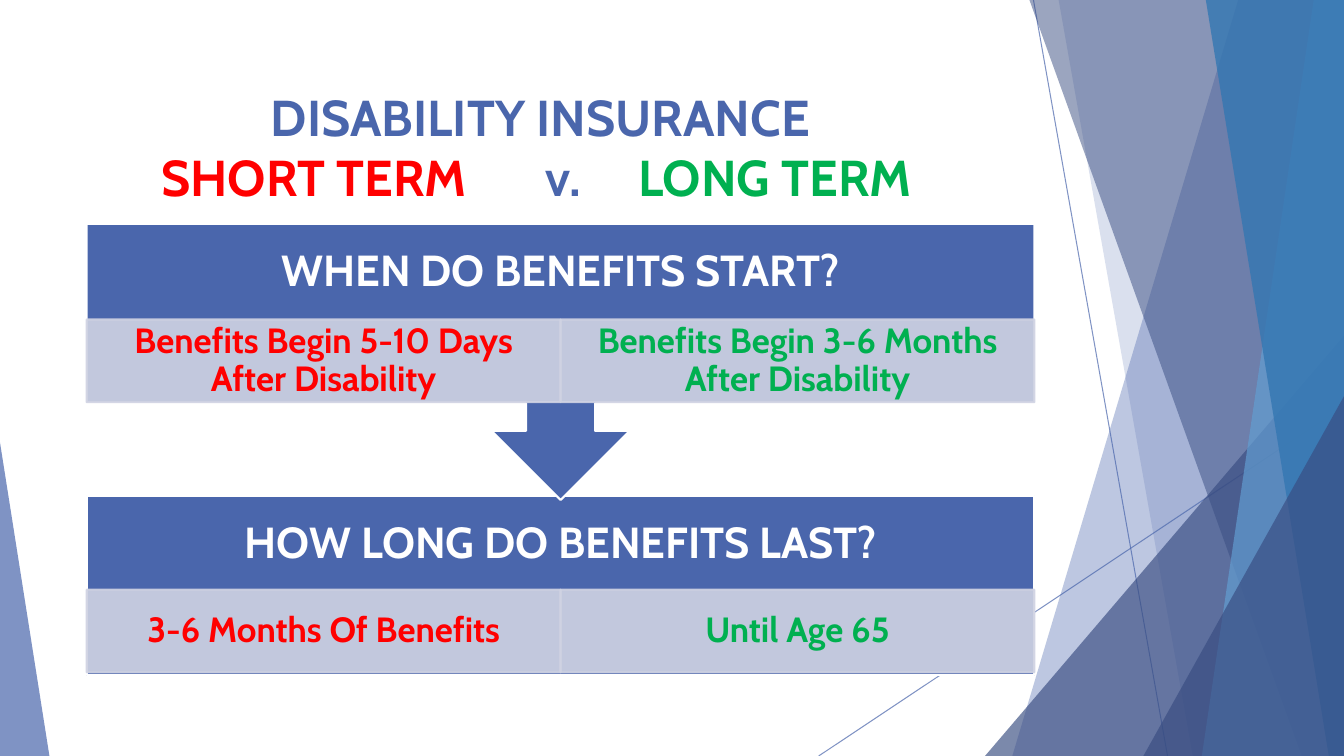
import pptx
import pptx.util
import pptx.dml.color
import pptx.enum.shapes
import pptx.enum.text
import pptx.oxml
import pptx.oxml.ns

SHAPE = pptx.enum.shapes.MSO_SHAPE
ALIGN = pptx.enum.text.PP_ALIGN
ANCHOR = pptx.enum.text.MSO_ANCHOR

# Content
FONT = "Cabin"
BLUE, NAVY, SKY, OCEAN = "4A66AC", "384C81", "629DD1", "3477B2"
RED, GREEN, WHITE, PALE = "FF0000", "00B050", "FFFFFF", "D0D3E3"
HEADLINE = "DISABILITY INSURANCE"
VERSUS = [("SHORT TERM", RED), ("\tv.", BLUE), ("\tLONG TERM", GREEN)]
VERSUS_TABS = [381, 473]
SECTIONS = [  # question, top of panel, panel height, top of answers, panel shape, turn, answers
    ("HOW LONG DO BENEFITS LAST?", 492, 178, 585, SHAPE.RECTANGLE, 0,
     ["3-6 Months Of Benefits", "Until Age 65"]),
    ("WHEN DO BENEFITS START?", 222, 274, 317, SHAPE.UP_ARROW_CALLOUT, 180,
     ["Benefits Begin 5-10 Days After Disability",
      "Benefits Begin 3-6 Months After Disability"]),
]
ANSWER_COLORS = [RED, GREEN]

# Background: all lengths in px, 100 to the inch
WIDTH, HEIGHT = 1333, 750
RAYS = [(1025, 0, 1158, 750), (1333, 403, 812, 750)]
BACKDROP = [  # band: top x, bottom x; triangle: box and tip; then color, opacity
    ("band", (1228, 1004), BLUE, 36),
    ("band", (1050, 1183), BLUE, 20),
    ("triangle", (977, 333, 356, 417, 1), NAVY, 66),
    ("band", (1021, 1291), NAVY, 50),
    ("band", (1303, 1192), SKY, 70),
    ("band", (1196, 1318), OCEAN, 80),
    ("triangle", (1134, 393, 199, 357, 1), NAVY, 66),
    ("triangle", (0, 439, 49, 311, 0), BLUE, 70),
]
PANEL_LEFT, PANEL_WIDTH = 86, 940
QUESTION_HEIGHT, ANSWER_HEIGHT = 96, 82


def px(length):
    return pptx.util.Emu(length * 9144)


def rgb(color):
    return pptx.dml.color.RGBColor.from_string(color)


def set_color(paint, color, opacity=100):
    paint.solid()
    paint.fore_color.rgb = rgb(color)
    if opacity < 100:
        xml = paint._xPr.find(pptx.oxml.ns.qn("a:solidFill"))[0]
        alpha = pptx.oxml.parse_xml(
            f'<a:alpha {pptx.oxml.ns.nsdecls("a")} val="{opacity * 1000}"/>')
        xml.append(alpha)


def style(shape, color, opacity=100, edge=None):
    shape.shadow.inherit = False
    set_color(shape.fill, color, opacity)
    if edge:
        set_color(shape.line.fill, edge, opacity)
        shape.line.width = pptx.util.Pt(1.5)
    else:
        shape.line.fill.background()


def set_margins(frame, side, top):
    frame.word_wrap = True
    frame.margin_left = frame.margin_right = px(side)
    frame.margin_top = frame.margin_bottom = px(top)


def set_font(font, size, color=None):
    font.name, font.size, font.bold = FONT, pptx.util.Pt(size), True
    if color:
        font.color.rgb = rgb(color)


def write(shape, text, size, color, side, top):
    frame = shape.text_frame
    set_margins(frame, side, top)
    frame.vertical_anchor = ANCHOR.MIDDLE
    line = frame.paragraphs[0]
    line.text = text
    line.alignment = ALIGN.CENTER
    line.line_spacing = 0.9
    set_font(line.font, size, color)


deck = pptx.Presentation()
deck.slide_width, deck.slide_height = px(WIDTH), px(HEIGHT)
slide = deck.slides.add_slide(deck.slide_layouts[6])
shapes = slide.shapes

# Thin rays
for ray in RAYS:
    line = shapes.add_connector(pptx.enum.shapes.MSO_CONNECTOR.STRAIGHT, *map(px, ray))
    set_color(line.line.fill, BLUE, 70)
    line.line.width = pptx.util.Pt(0.75)
    line._element.spPr.append(
        pptx.oxml.parse_xml(f'<a:effectLst {pptx.oxml.ns.nsdecls("a")}/>'))

# Translucent bands and triangles
for kind, place, color, opacity in BACKDROP:
    if kind == "band":
        top_x, bottom_x = place
        outline = shapes.build_freeform(top_x, 0, scale=px(1))
        outline.add_line_segments([(WIDTH, 0), (WIDTH, HEIGHT), (bottom_x, HEIGHT)])
        facet = outline.convert_to_shape()
    else:
        *box, tip = place
        facet = shapes.add_shape(SHAPE.ISOSCELES_TRIANGLE, *map(px, box))
        facet.adjustments[0] = tip
    style(facet, color, opacity)

# Title
title = shapes.add_textbox(*map(px, (66, 80, 940, 119))).text_frame
set_margins(title, 94, 5)
headline = title.paragraphs[0]
headline.text = HEADLINE
headline.alignment = ALIGN.CENTER
set_font(headline.font, 36, BLUE)
versus = title.add_paragraph()
versus.alignment = ALIGN.LEFT
set_font(versus.font, 36)
for text, color in VERSUS:
    run = versus.add_run()
    run.text = text
    set_font(run.font, 36, color)
tabs = "".join(f'<a:tab pos="{px(stop)}" algn="l"/>' for stop in VERSUS_TABS)
versus._p.get_or_add_pPr().insert(0, pptx.oxml.parse_xml(
    f'<a:tabLst {pptx.oxml.ns.nsdecls("a")}>{tabs}</a:tabLst>'))

# Questions, each with its two answers
answer_width = PANEL_WIDTH // 2
for question, top, height, answer_top, outline, turn, answers in SECTIONS:
    panel = shapes.add_shape(outline, *map(px, (PANEL_LEFT, top, PANEL_WIDTH, height)))
    panel.rotation = turn
    style(panel, BLUE, edge=WHITE)
    heading = shapes.add_textbox(
        *map(px, (PANEL_LEFT, top, PANEL_WIDTH, QUESTION_HEIGHT)))
    write(heading, question, 31, WHITE, 24, 24)
    for column, (answer, color) in enumerate(zip(answers, ANSWER_COLORS)):
        left = PANEL_LEFT + column * answer_width
        cell = shapes.add_shape(
            SHAPE.RECTANGLE, *map(px, (left, answer_top, answer_width, ANSWER_HEIGHT)))
        style(cell, PALE, 90, PALE)
        write(cell, answer, 25, color, 19, 3)

deck.save("out.pptx")
